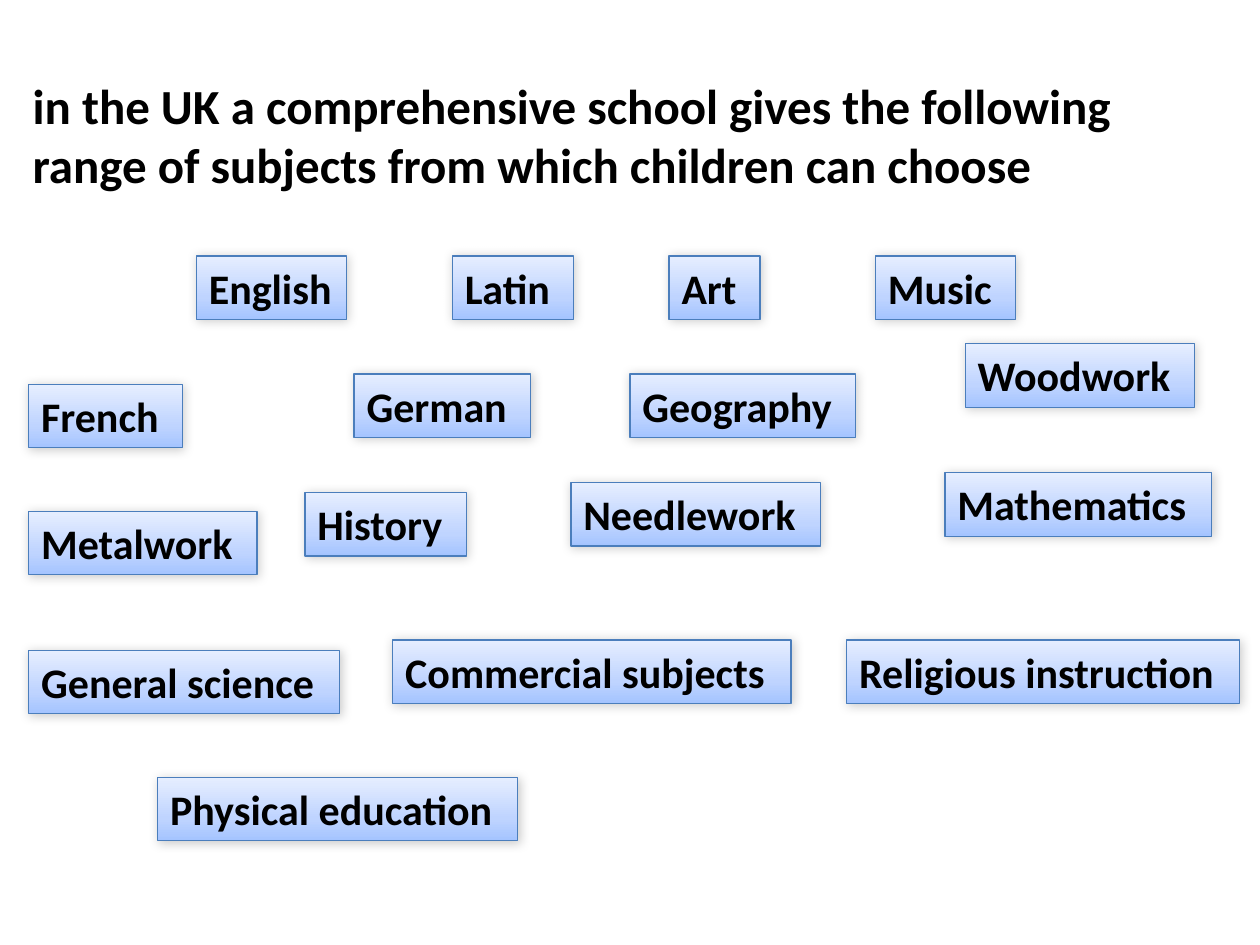
from copy import deepcopy

from lxml.etree import SubElement
from pptx import Presentation
from pptx.dml.color import RGBColor
from pptx.enum.shapes import MSO_SHAPE
from pptx.enum.text import MSO_ANCHOR, PP_ALIGN
from pptx.oxml.ns import qn
from pptx.util import Cm, Pt

BLACK = RGBColor(0x00, 0x00, 0x00)
EDGE = RGBColor(0x4B, 0x7E, 0xBC)
STOPS = [
    (0, RGBColor(0xA4, 0xC4, 0xFF)),
    (0.35, RGBColor(0xBF, 0xD4, 0xFF)),
    (1, RGBColor(0xE6, 0xEE, 0xFF)),
]

# Subject, left, top and width in cm
SUBJECTS = [
    ("English", 3.96, 5.16, 3.02),
    ("French", 0.58, 7.75, 3.1),
    ("German", 7.14, 7.54, 3.56),
    ("Latin", 9.12, 5.16, 2.44),
    ("History", 6.15, 9.93, 3.25),
    ("Geography", 12.7, 7.54, 4.55),
    ("Art", 13.49, 5.16, 1.83),
    ("Music", 17.65, 5.16, 2.82),
    ("Woodwork", 19.46, 6.93, 4.62),
    ("Metalwork", 0.58, 10.31, 4.6),
    ("Needlework", 11.51, 9.73, 5.03),
    ("Commercial subjects", 7.92, 12.9, 8.03),
    ("Mathematics", 19.05, 9.53, 5.38),
    ("General science", 0.58, 13.11, 6.27),
    ("Religious instruction", 17.07, 12.9, 7.92),
    ("Physical education", 3.18, 15.67, 7.26),
]
HEIGHT = Cm(1.28)


def set_text(shape, text, size):
    frame = shape.text_frame
    frame.text = text
    frame.word_wrap = True
    frame.vertical_anchor = MSO_ANCHOR.TOP
    line = frame.paragraphs[0]
    line.alignment = PP_ALIGN.LEFT
    font = line.runs[0].font
    font.name = "Calibri"
    font.size = Pt(size)
    font.bold = True
    font.color.rgb = BLACK


def style_box(box):
    """Give the box its three-stop gradient, thin edge and soft shadow."""
    box.fill.gradient()
    box.fill.gradient_angle = 90
    props = box._element.spPr
    stops = props.find(qn("a:gradFill")).find(qn("a:gsLst"))
    stops.insert(1, deepcopy(stops[0]))
    for stop, (place, color) in zip(box.fill.gradient_stops, STOPS):
        stop.position = place
        stop.color.rgb = color

    box.line.color.rgb = EDGE
    box.line.width = Pt(0.75)

    box.shadow.inherit = False
    shadow = SubElement(
        props.find(qn("a:effectLst")), qn("a:outerShdw"),
        blurRad=str(Pt(6)), dist=str(Pt(1)), dir=str(45 * 60000),
        rotWithShape="0",
    )
    color = SubElement(shadow, qn("a:srgbClr"), val=str(BLACK))
    SubElement(color, qn("a:alpha"), val="20000")


deck = Presentation()
deck.slide_width = Cm(25.4)
deck.slide_height = Cm(19.05)
slide = deck.slides.add_slide(deck.slide_layouts[6])

title = slide.shapes.add_textbox(Cm(0.41), Cm(1.4), Cm(24.21), Cm(2.64))
set_text(
    title,
    "in the UK a comprehensive school gives the following "
    "range of subjects from which children can choose",
    28,
)

for subject, left, top, width in SUBJECTS:
    box = slide.shapes.add_shape(
        MSO_SHAPE.RECTANGLE, Cm(left), Cm(top), Cm(width), HEIGHT
    )
    style_box(box)
    set_text(box, subject, 24)

deck.save("out.pptx")
